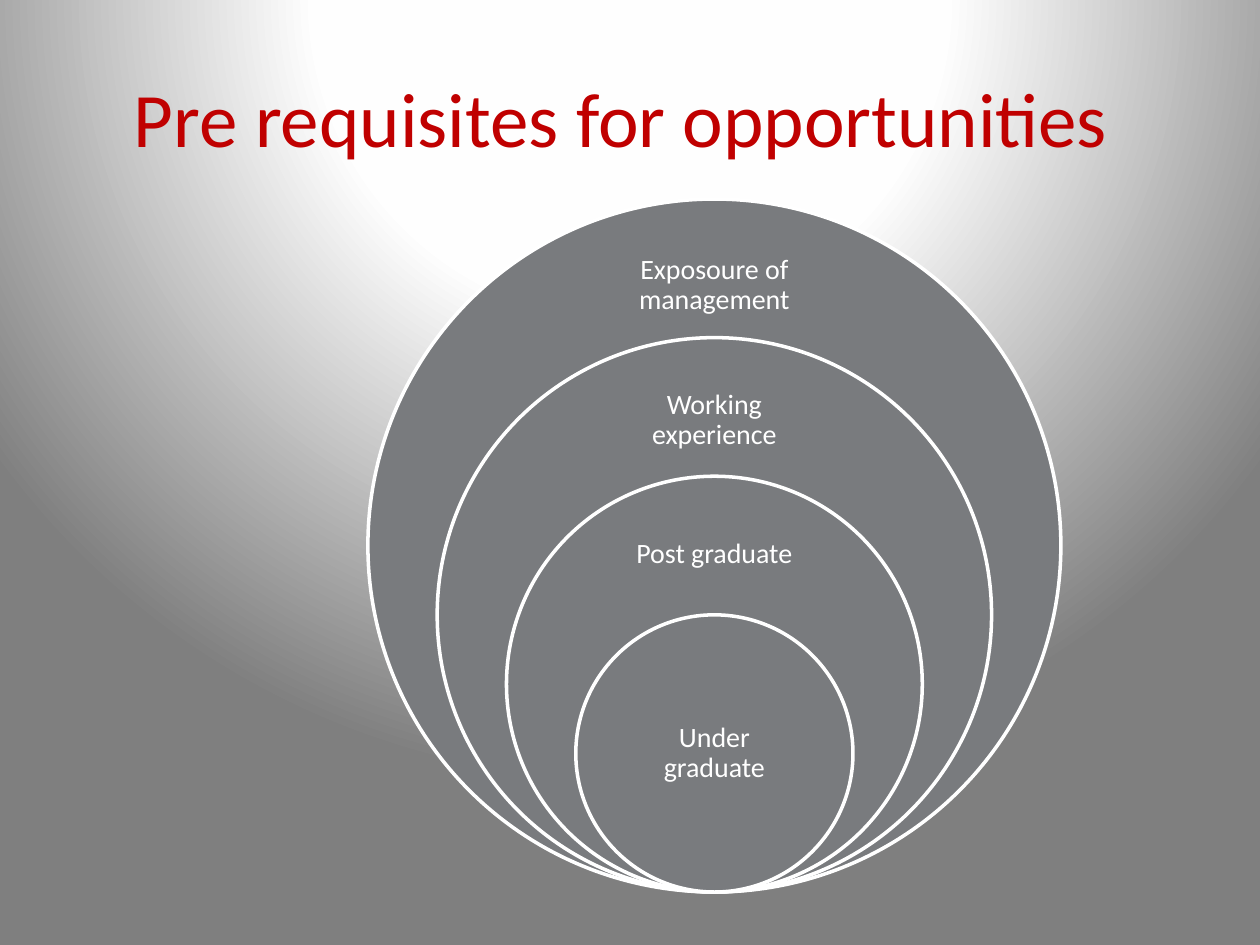
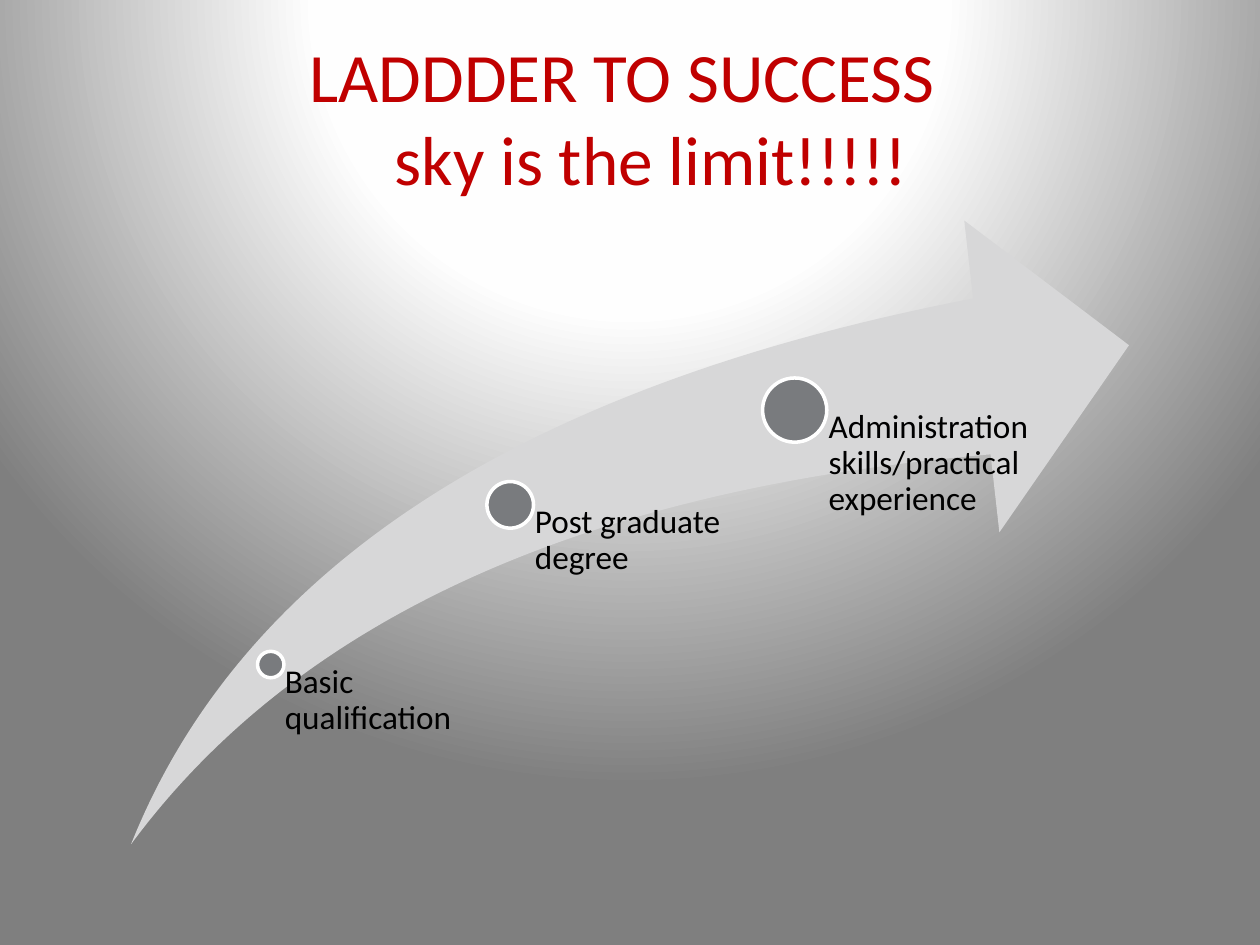
from pptx import Presentation
from pptx import util as u
from pptx.dml.color import RGBColor
from pptx.enum import shapes, text
from pptx.oxml import parse_xml
from pptx.oxml.ns import nsdecls, qn

# Content: circle label, then label top and height as shares of the circle
REQUISITES_TITLE = ["Pre requisites for opportunities "]
REQUISITES = [
    ("Exposoure of management", 0.05, 0.15),
    ("Working experience", 0.06, 0.18),
    ("Post graduate", 0.075, 0.225),
    ("Under graduate", 0.25, 0.5),
]
# Content: step label, dot centre (x, y) as shares of the arrow, dot size, label width
LADDER_TITLE = ["LADDDER TO SUCCESS ", "sky is the limit!!!!!"]
LADDER = [
    ("Basic qualification", 0.14, 0.712, 0.21, 1.85),
    ("Post graduate degree", 0.38, 0.456, 0.37, 1.9),
    ("Administration skills/practical experience", 0.665, 0.304, 0.51, 1.9),
]

# Shared look
FONT = "Calibri"
RED = RGBColor(0xC0, 0x00, 0x00)
GREY = RGBColor(0x79, 0x7B, 0x7E)
PALE = RGBColor(0xD7, 0xD7, 0xD8)
WHITE = RGBColor(0xFF, 0xFF, 0xFF)
BLACK = RGBColor(0x00, 0x00, 0x00)
GLOW = [(0, "FFFFFF"), (40, "FEFEFE"), (100, "7F7F7F")]

# Layout in inches
SLIDE_W, SLIDE_H = 10, 7.5
TITLE_BOX = (0.5, 0.3, 9, 1.25)
CIRCLE_CENTRE, CIRCLE_BOTTOM, OUTER = 5.67, 7.08, 5.5
LABEL_W = 1.54
ARROW_BOX = (1.04, 1.75, 7.92, 4.95)


def inches(*lengths):
    return [u.Inches(length) for length in lengths]


def paint_background(master):
    """Radial glow whose centre lies above the slide."""
    master.background.fill.solid()
    holder = master.element.find(".//" + qn("p:bgPr"))
    stops = "".join(f'<a:gs pos="{pos * 1000}"><a:srgbClr val="{colour}"/></a:gs>'
                    for pos, colour in GLOW)
    glow = parse_xml(
        f'<a:gradFill {nsdecls("a")} rotWithShape="1"><a:gsLst>{stops}</a:gsLst>'
        '<a:path path="circle"><a:fillToRect l="50000" t="-80000" r="50000" b="180000"/>'
        '</a:path></a:gradFill>')
    holder.replace(holder.find(qn("a:solidFill")), glow)


def format_text(frame, size, colour, align):
    for paragraph in frame.paragraphs:
        paragraph.alignment = align
        for run in paragraph.runs:
            run.font.name = FONT
            run.font.size = u.Pt(size)
            run.font.color.rgb = colour


def new_slide(deck, title_lines, size):
    slide = deck.slides.add_slide(deck.slide_layouts[5])
    title = slide.shapes.title
    title.left, title.top, title.width, title.height = inches(*TITLE_BOX)
    frame = title.text_frame
    frame.text = "\n".join(title_lines)
    frame.vertical_anchor = text.MSO_ANCHOR.MIDDLE
    format_text(frame, size, RED, text.PP_ALIGN.CENTER)
    for paragraph in frame.paragraphs:
        paragraph.space_before = u.Pt(0)
    return slide


def add_figure(slide, kind, box, fill, outlined=True):
    figure = slide.shapes.add_shape(kind, *inches(*box))
    figure.shadow.inherit = False
    figure.fill.solid()
    figure.fill.fore_color.rgb = fill
    if outlined:
        figure.line.color.rgb = WHITE
        figure.line.width = u.Pt(2)
    else:
        figure.line.fill.background()
    return figure


def add_label(slide, words, box, insets, size, colour, align, anchor):
    frame = slide.shapes.add_textbox(*inches(*box)).text_frame
    frame.word_wrap = True
    (frame.margin_left, frame.margin_top,
     frame.margin_right, frame.margin_bottom) = inches(*insets)
    frame.vertical_anchor = anchor
    frame.text = words
    frame.paragraphs[0].line_spacing = 0.9
    format_text(frame, size, colour, align)


def build_requisites(deck):
    slide = new_slide(deck, REQUISITES_TITLE, 44)
    for ring, (words, top_share, height_share) in enumerate(REQUISITES):
        # Each circle is a fifth of the outer one smaller; all share the lowest point
        size = OUTER * (1 - ring / 5)
        top = CIRCLE_BOTTOM - size
        add_figure(slide, shapes.MSO_SHAPE.OVAL,
                   (CIRCLE_CENTRE - size / 2, top, size, size), GREY)
        add_label(slide, words,
                  (CIRCLE_CENTRE - LABEL_W / 2, top + top_share * size,
                   LABEL_W, height_share * size),
                  [0.12] * 4, 16, WHITE, text.PP_ALIGN.CENTER, text.MSO_ANCHOR.MIDDLE)


def build_ladder(deck):
    slide = new_slide(deck, LADDER_TITLE, 39.6)
    subtitle = slide.shapes.title.text_frame.paragraphs[1]
    properties = subtitle._p.get_or_add_pPr()
    properties.set("marL", str(u.Inches(0.34)))
    properties.set("indent", "0")

    left, top, width, height = ARROW_BOX
    arrow = add_figure(slide, shapes.MSO_SHAPE.SWOOSH_ARROW, ARROW_BOX, PALE, outlined=False)
    arrow.adjustments[0] = arrow.adjustments[1] = 0.25
    for words, x_share, y_share, dot, label_w in LADDER:
        x, y = left + x_share * width, top + y_share * height
        add_figure(slide, shapes.MSO_SHAPE.OVAL, (x - dot / 2, y - dot / 2, dot, dot), GREY)
        # Label runs from the dot's centre down to the arrow's bottom
        add_label(slide, words, (x, y, label_w, top + height - y),
                  (dot * 0.53, 0, 0, 0), 19, BLACK,
                  text.PP_ALIGN.LEFT, text.MSO_ANCHOR.TOP)


def main():
    deck = Presentation()
    deck.slide_width, deck.slide_height = inches(SLIDE_W, SLIDE_H)
    paint_background(deck.slide_master)
    build_requisites(deck)
    build_ladder(deck)
    deck.save("out.pptx")


if __name__ == "__main__":
    main()
